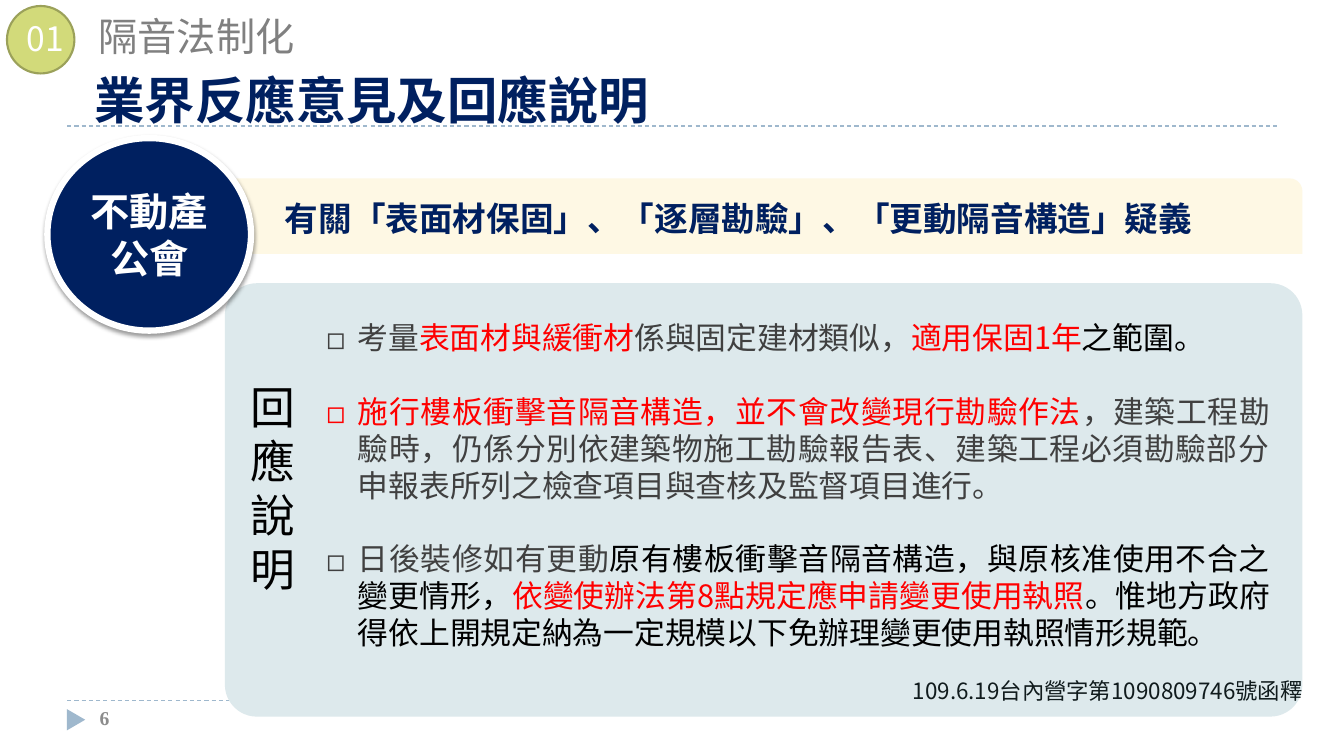
from typing import NamedTuple

from lxml.etree import SubElement
from pptx import Presentation
from pptx.dml.color import RGBColor
from pptx.enum.dml import MSO_LINE
from pptx.enum.shapes import MSO_CONNECTOR, MSO_SHAPE
from pptx.enum.text import MSO_ANCHOR, PP_ALIGN
from pptx.oxml.ns import qn
from pptx.util import Pt

NAVY = RGBColor(0x00, 0x20, 0x60)
WHITE = RGBColor(0xFF, 0xFF, 0xFF)
BLACK = RGBColor(0x00, 0x00, 0x00)
RED = RGBColor(0xFF, 0x00, 0x00)
DARK_GREY = RGBColor(0x40, 0x40, 0x40)
GREY = RGBColor(0x80, 0x80, 0x80)
PAGE_GREY = RGBColor(0x8C, 0x8C, 0x8C)
RULE_BLUE = RGBColor(0x9F, 0xB8, 0xCD)
PANEL_BLUE = RGBColor(0xDD, 0xE9, 0xEC)
CREAM = RGBColor(0xFE, 0xF8, 0xE4)
LIME = RGBColor(0xD2, 0xDA, 0x7A)
OLIVE = RGBColor(0x9B, 0xA1, 0x5A)
INK = RGBColor(0x10, 0x1B, 0x1D)

SANS = "Noto Sans CJK SC"
SANS_TC = "Noto Sans CJK TC"
SERIF = "Times New Roman"
LINE_PITCH = 1.2
REPLY_SIZE = 22
REPLY_INDENT = 22.5


class Box(NamedTuple):
    left: float
    top: float
    width: float
    height: float


class Run(NamedTuple):
    text: str
    color: RGBColor


class Label(NamedTuple):
    text: str
    box: Box
    size: float
    color: RGBColor
    bold: bool = False
    font: str = SANS


REPLIES = [
    [
        Run("考量", DARK_GREY),
        Run("表面材與緩衝材", RED),
        Run("係與固定建材類似，", DARK_GREY),
        Run("適用保固1年", RED),
        Run("之範圍。", BLACK),
    ],
    [
        Run("施行樓板衝擊音隔音構造，並不會改變現行勘驗作法", RED),
        Run("，建築工程勘驗時，仍係分別依建築物施工勘驗報告表、建築工程必須勘驗部分"
            "申報表所列之檢查項目與查核及監督項目進行。", DARK_GREY),
    ],
    [
        Run("日後裝修如有更動", DARK_GREY),
        Run("原有樓板衝擊音隔音構造，與原核准使用不合之變更情形，", BLACK),
        Run("依變使辦法第8點規定應申請變更使用執照", RED),
        Run("。惟地方政府得依上開規定納為一定規模以下免辦理變更使用執照情形規範。", BLACK),
    ],
]

PAGE_NUMBER = Label("6", Box(64.08, 500.4, 208, 28.8), 14, PAGE_GREY, True, SERIF)
REPLY_HEADING = Label("回應說明", Box(172, 267.84, 36, 162.72), 32, BLACK)
HEADINGS = [
    Label("業界反應意見及回應說明", Box(60.5, 46, 412.5, 51), 36, NAVY, True),
    Label("有關「表面材保固」、「逐層勘驗」、「更動隔音構造」疑義",
          Box(196.5, 138.2, 690, 36), 24, NAVY, True),
    Label("隔音法制化", Box(63.4, 5, 198, 41), 28, GREY),
    Label("01", Box(12.2, 9.4, 42.5, 36), 24, WHITE),
    Label("109.6.19台內營字第1090809746號函釋",
          Box(645, 480.2, 382.3, 26.6), 16, INK, font=SANS_TC),
]


def add_run(paragraph, text: str, *, size: float, color: RGBColor,
            bold: bool = False, font: str = SANS) -> None:
    run = paragraph.add_run()
    run.text = text
    run.font.size = Pt(size)
    run.font.bold = bold
    run.font.color.rgb = color
    run.font.name = font
    SubElement(run.font._element, qn("a:ea")).set("typeface", font)
    paragraph.line_spacing = Pt(size * LINE_PITCH)


def add_text_frame(slide, box: Box):
    frame = slide.shapes.add_textbox(*map(Pt, box)).text_frame
    frame.word_wrap = True
    return frame


def add_label(slide, label: Label) -> None:
    paragraph = add_text_frame(slide, label.box).paragraphs[0]
    add_run(paragraph, label.text, size=label.size, color=label.color,
            bold=label.bold, font=label.font)


def add_filled(slide, kind: MSO_SHAPE, box: Box, fill: RGBColor,
               line: RGBColor | None = None, line_width: float = 0):
    shape = slide.shapes.add_shape(kind, *map(Pt, box))
    shape.shadow.inherit = False
    shape.fill.solid()
    shape.fill.fore_color.rgb = fill
    if line is None:
        shape.line.fill.background()
    else:
        shape.line.color.rgb = line
        shape.line.width = Pt(line_width)
    return shape


def add_dashed_rule(slide, y: float) -> None:
    rule = slide.shapes.add_connector(
        MSO_CONNECTOR.STRAIGHT, Pt(48), Pt(y), Pt(912), Pt(y))
    rule.line.color.rgb = RULE_BLUE
    rule.line.width = Pt(0.75)
    rule.line.dash_style = MSO_LINE.DASH
    SubElement(rule._element.spPr, qn("a:effectLst"))


def add_drop_shadow(shape) -> None:
    effects = shape._element.spPr.find(qn("a:effectLst"))
    shadow = SubElement(effects, qn("a:outerShdw"), blurRad=str(Pt(3)),
                        dist=str(Pt(2)), dir="5400000", rotWithShape="0")
    color = SubElement(shadow, qn("a:srgbClr"), val=str(BLACK))
    SubElement(color, qn("a:alpha"), val="40000")


def add_replies(slide) -> None:
    frame = add_text_frame(slide, Box(226, 224, 688.3, 247))
    for index, runs in enumerate(REPLIES):
        paragraph = frame.add_paragraph() if index else frame.paragraphs[0]
        paragraph.alignment = PP_ALIGN.JUSTIFY
        if index:
            paragraph.space_before = Pt(REPLY_SIZE * LINE_PITCH)
        properties = paragraph._p.get_or_add_pPr()
        properties.set("marL", str(Pt(REPLY_INDENT)))
        properties.set("indent", str(-Pt(REPLY_INDENT)))
        SubElement(properties, qn("a:buFont"), typeface=SANS)
        SubElement(properties, qn("a:buChar"), char="◻")
        for run in runs:
            add_run(paragraph, run.text, size=REPLY_SIZE, color=run.color)


def add_association_badge(slide) -> None:
    badge = add_filled(slide, MSO_SHAPE.OVAL, Box(33.84, 98.64, 145.44, 137.52),
                       NAVY, WHITE, 4.5)
    add_drop_shadow(badge)
    frame = badge.text_frame
    frame.word_wrap = True
    frame.vertical_anchor = MSO_ANCHOR.MIDDLE
    paragraph = frame.paragraphs[0]
    paragraph.alignment = PP_ALIGN.CENTER
    add_run(paragraph, "不動產公會", size=28, color=WHITE, bold=True)


def main() -> None:
    presentation = Presentation()
    presentation.slide_width, presentation.slide_height = Pt(960), Pt(540)
    slide = presentation.slides.add_slide(presentation.slide_layouts[6])

    for y in (500.4, 90):
        add_dashed_rule(slide, y)
    page_marker = add_filled(slide, MSO_SHAPE.ISOSCELES_TRIANGLE,
                             Box(46.8, 507.6, 15.1, 13), RULE_BLUE)
    page_marker.rotation = 90
    add_label(slide, PAGE_NUMBER)

    reply_panel = add_filled(slide, MSO_SHAPE.ROUNDED_RECTANGLE,
                             Box(160.6, 202.3, 769.7, 309.6), PANEL_BLUE)
    reply_panel.adjustments[0] = 0.074
    add_replies(slide)
    add_label(slide, REPLY_HEADING)

    topic_banner = add_filled(slide, MSO_SHAPE.ROUND_2_DIAG_RECTANGLE,
                              Box(160.6, 127.4, 769.7, 54), CREAM)
    topic_banner.adjustments[0] = 0
    topic_banner.adjustments[1] = 0.17
    add_association_badge(slide)
    add_filled(slide, MSO_SHAPE.OVAL, Box(5, 4.3, 48.2, 48.2), LIME, OLIVE, 1.5)
    for heading in HEADINGS:
        add_label(slide, heading)

    presentation.save("out.pptx")


if __name__ == "__main__":
    main()
